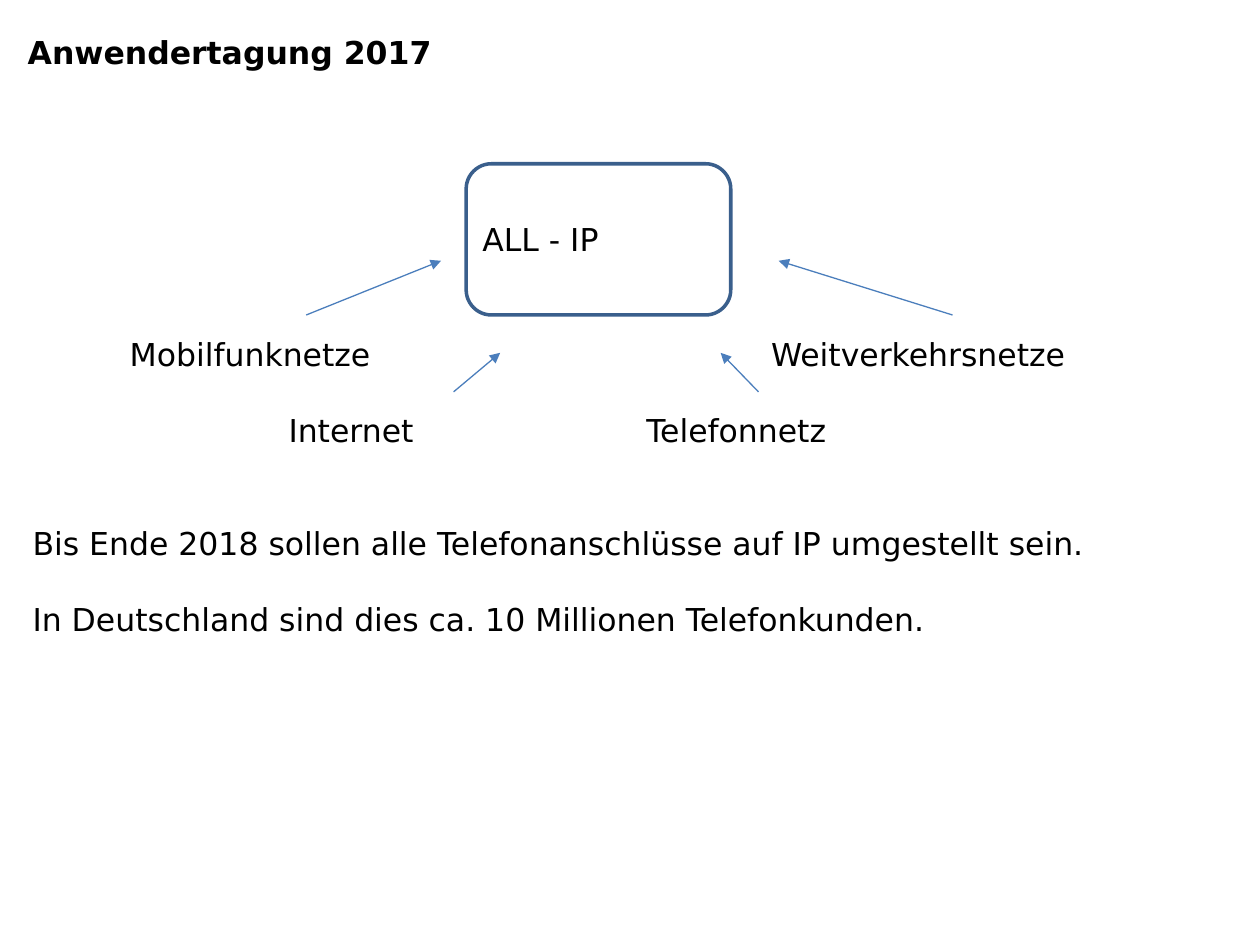
from typing import NamedTuple

from lxml import etree
from pptx import Presentation
from pptx.dml.color import RGBColor
from pptx.enum.shapes import MSO_CONNECTOR, MSO_SHAPE
from pptx.enum.text import MSO_ANCHOR, PP_ALIGN
from pptx.oxml.ns import qn
from pptx.util import Inches, Pt

BOX = MSO_SHAPE.FLOWCHART_ALTERNATE_PROCESS
STRAIGHT = MSO_CONNECTOR.STRAIGHT
TOP, MIDDLE = MSO_ANCHOR.TOP, MSO_ANCHOR.MIDDLE
LEFT = PP_ALIGN.LEFT

FONT = "DejaVu Sans"
SIZE = 18
LINE_HEIGHT = 0.3
COLORS = {"text": "000000", "box": "3A5F8C", "arrow": "4B7EBC"}


class Network(NamedTuple):
    name: str
    left: float
    top: float
    width: float
    start: tuple[float, float]
    end: tuple[float, float]


NETWORKS = [
    Network("Mobilfunknetze", 1.03, 2.66, 2.0, (2.43, 2.5), (3.5, 2.07)),
    Network("Internet", 2.29, 3.26, 1.1, (3.6, 3.11), (3.97, 2.8)),
    Network("Telefonnetz", 5.13, 3.26, 1.5, (6.02, 3.11), (5.72, 2.8)),
    Network("Weitverkehrsnetze", 6.12, 2.66, 2.4, (7.56, 2.5), (6.18, 2.07)),
]
STATEMENTS = [
    "Bis Ende 2018 sollen alle Telefonanschlüsse auf IP umgestellt sein.",
    "In Deutschland sind dies ca. 10 Millionen Telefonkunden.",
]


def rgb(name: str) -> RGBColor:
    return RGBColor.from_string(COLORS[name])


def write(sp, *lines: str, bold: bool = False, anchor=TOP, inset: float = 0,
          inset_y: float = 0, gap: float = 0) -> None:
    """Fill a shape with left-aligned paragraphs, separated by gap inches."""
    tf = sp.text_frame
    tf.word_wrap = True
    tf.vertical_anchor = anchor
    tf.margin_left = tf.margin_right = Inches(inset)
    tf.margin_top = tf.margin_bottom = Inches(inset_y)
    for i, line in enumerate(lines):
        p = tf.add_paragraph() if i else tf.paragraphs[0]
        p.alignment = LEFT
        p.space_before = Inches(gap if i else 0)
        r = p.add_run()
        r.text = line
        r.font.name = FONT
        r.font.size = Pt(SIZE)
        r.font.bold = bold
        r.font.color.rgb = rgb("text")


def add_arrow(s, start: tuple[float, float], end: tuple[float, float]) -> None:
    points = [Inches(v) for v in (*start, *end)]
    cx = s.shapes.add_connector(STRAIGHT, *points)
    cx.line.color.rgb = rgb("arrow")
    cx.line.width = Pt(0.75)
    etree.SubElement(cx.line._get_or_add_ln(), qn("a:tailEnd"), type="triangle")
    etree.SubElement(cx._element.spPr, qn("a:effectLst"))


def add_network(s, net: Network) -> None:
    sp = s.shapes.add_textbox(Inches(net.left), Inches(net.top),
                              Inches(net.width), Inches(LINE_HEIGHT))
    write(sp, net.name)
    add_arrow(s, net.start, net.end)


def main() -> None:
    prs = Presentation()
    prs.slide_width, prs.slide_height = Inches(10), Inches(7.5)
    s = prs.slides.add_slide(prs.slide_layouts[5])

    # Title
    title = s.shapes.title
    title.left, title.top = Inches(0.12), Inches(0.21)
    title.width, title.height = Inches(9.76), Inches(0.71)
    write(title, "Anwendertagung 2017", bold=True, inset=0.1, inset_y=0.05)

    # Central box
    box = s.shapes.add_shape(BOX, Inches(3.7), Inches(1.3), Inches(2.1), Inches(1.2))
    box.shadow.inherit = False
    box.fill.background()
    box.line.color.rgb = rgb("box")
    box.line.width = Pt(2)
    write(box, "ALL - IP", anchor=MIDDLE, inset=0.07)

    # Networks leading to the box
    for net in NETWORKS:
        add_network(s, net)

    # Statements
    body = s.shapes.add_textbox(Inches(0.16), Inches(4.16), Inches(9.69), Inches(0.9))
    write(body, *STATEMENTS, inset=0.1, gap=LINE_HEIGHT)

    prs.save("out.pptx")


if __name__ == "__main__":
    main()
